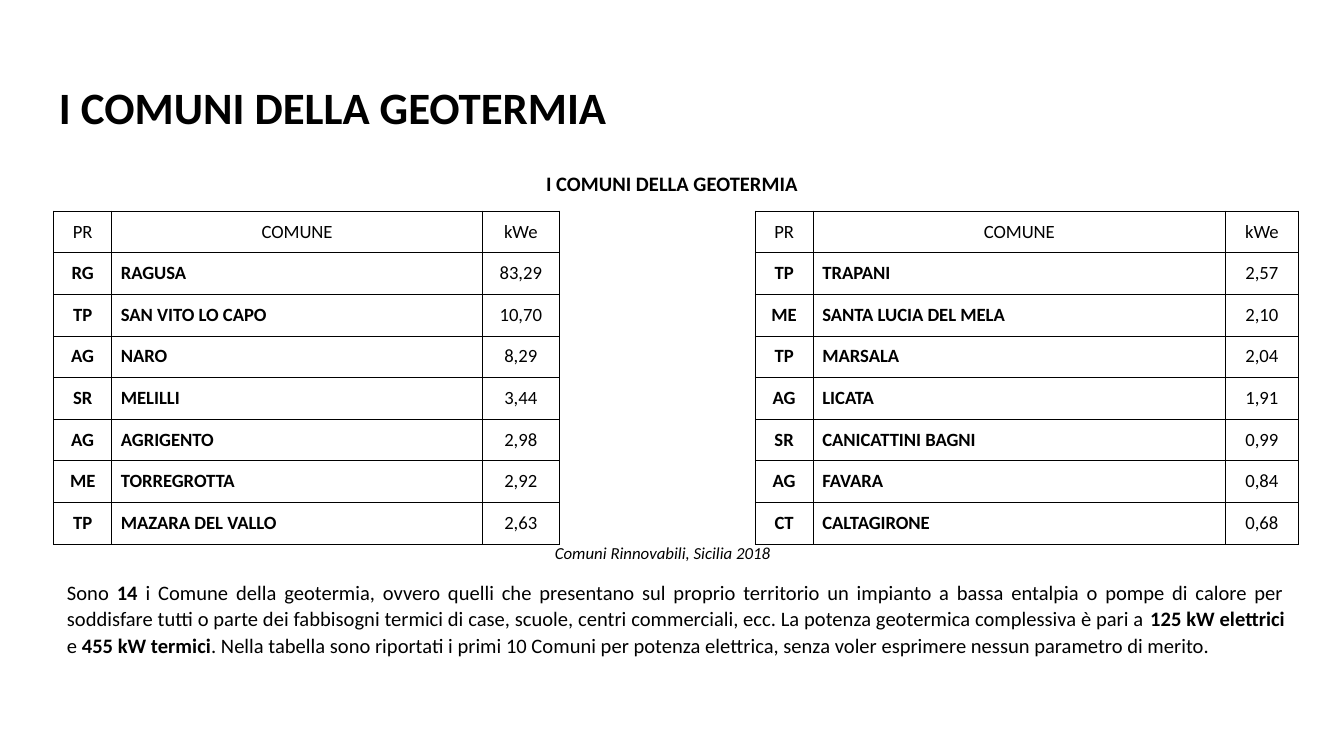
from lxml import etree
from pptx import Presentation
from pptx.dml.color import RGBColor
from pptx.enum.text import MSO_ANCHOR, PP_ALIGN
from pptx.oxml.ns import qn
from pptx.util import Inches, Pt

LEFT, CENTER, JUSTIFY = PP_ALIGN.LEFT, PP_ALIGN.CENTER, PP_ALIGN.JUSTIFY
TOP, MIDDLE = MSO_ANCHOR.TOP, MSO_ANCHOR.MIDDLE
FONT, BLACK = "Calibri", "000000"

# Content
TITLE = "I COMUNI DELLA GEOTERMIA"
SOURCE = "Comuni Rinnovabili, Sicilia 2018"
HEADER = ("PR", "COMUNE", "kWe")
LEFT_TOWNS = [
    ("RG", "RAGUSA", "83,29"),
    ("TP", "SAN VITO LO CAPO", "10,70"),
    ("AG", "NARO", "8,29"),
    ("SR", "MELILLI", "3,44"),
    ("AG", "AGRIGENTO", "2,98"),
    ("ME", "TORREGROTTA", "2,92"),
    ("TP", "MAZARA DEL VALLO", "2,63"),
]
RIGHT_TOWNS = [
    ("TP", "TRAPANI", "2,57"),
    ("ME", "SANTA LUCIA DEL MELA", "2,10"),
    ("TP", "MARSALA", "2,04"),
    ("AG", "LICATA", "1,91"),
    ("SR", "CANICATTINI BAGNI", "0,99"),
    ("AG", "FAVARA", "0,84"),
    ("CT", "CALTAGIRONE", "0,68"),
]
# Comment spans: text, bold
COMMENT = [
    ("Sono ", False),
    ("14", True),
    (" i Comune della geotermia, ovvero quelli che presentano sul proprio territorio "
     "un impianto a bassa entalpia o pompe di calore per soddisfare tutti o parte dei "
     "fabbisogni termici di case, scuole, centri commerciali, ecc. La potenza "
     "geotermica complessiva è pari a ", False),
    ("125 kW elettrici", True),
    (" e ", False),
    ("455 kW termici", True),
    (". Nella tabella sono riportati i primi 10 Comuni per potenza elettrica, senza "
     "voler esprimere nessun parametro di merito.", False),
]

# Layout, in inches, on a 16:9 slide
SLIDE_WIDTH = 10
SLIDE_HEIGHT = SLIDE_WIDTH * 9 / 16
HEADING_LEFT = 0.34
HEADING_WIDTH = SLIDE_WIDTH - 2 * HEADING_LEFT
TABLE_LEFT, TABLE_TOP = 0.4, 1.57
COLUMNS = [0.43, 2.76, 0.57, 1.46, 0.43, 3.07, 0.54]
GAP_COLUMN = 3
ROW_HEIGHT = 0.31


def color(value):
    return RGBColor.from_string(value)


def add_spans(para, spans, size, italic=False):
    for text, bold in spans:
        span = para.add_run()
        span.text = text
        font = span.font
        font.name, font.size, font.bold, font.italic = FONT, Pt(size), bold, italic
        font.color.rgb = color(BLACK)


def add_text(slide, place, spans, size, align=LEFT, anchor=MIDDLE,
             spacing=1.08, after=0, italic=False):
    box = slide.shapes.add_textbox(*[Inches(length) for length in place])
    frame = box.text_frame
    frame.word_wrap = True
    frame.vertical_anchor = anchor
    frame.margin_left = frame.margin_right = Inches(0.1)
    frame.margin_top = frame.margin_bottom = Inches(0.1)
    para = frame.paragraphs[0]
    para.alignment, para.line_spacing, para.space_after = align, spacing, Pt(after)
    add_spans(para, spans, size, italic)


def set_borders(cell, visible_sides):
    properties = cell._tc.get_or_add_tcPr()
    for side in "LRTB":
        line = etree.SubElement(properties, qn(f"a:ln{side}"), w=str(Pt(0.5)))
        if side in visible_sides:
            fill = etree.SubElement(line, qn("a:solidFill"))
            etree.SubElement(fill, qn("a:srgbClr"), val=BLACK)
        else:
            etree.SubElement(line, qn("a:noFill"))


def add_towns_table(slide):
    rows = [HEADER + ("",) + HEADER]
    rows += [left + ("",) + right for left, right in zip(LEFT_TOWNS, RIGHT_TOWNS)]
    table = slide.shapes.add_table(
        len(rows), len(COLUMNS), Inches(TABLE_LEFT), Inches(TABLE_TOP),
        Inches(sum(COLUMNS)), Inches(ROW_HEIGHT * len(rows))).table
    table.first_row = table.horz_banding = False
    for column, width in zip(table.columns, COLUMNS):
        column.width = Inches(width)

    for row_index, values in enumerate(rows):
        table.rows[row_index].height = Inches(ROW_HEIGHT)
        for column_index, text in enumerate(values):
            cell = table.cell(row_index, column_index)
            is_gap = column_index == GAP_COLUMN
            margin = Inches(0 if is_gap else 0.07)
            cell.margin_left = cell.margin_right = margin
            cell.margin_top = cell.margin_bottom = margin
            set_borders(cell, "LR" if is_gap else "LRTB")
            cell.fill.background()
            if is_gap:
                continue
            is_town = row_index > 0
            heading = HEADER[column_index % (GAP_COLUMN + 1)]
            para = cell.text_frame.paragraphs[0]
            para.alignment = LEFT if is_town and heading == "COMUNE" else CENTER
            add_spans(para, [(text, is_town and heading != "kWe")], 10)


def main():
    deck = Presentation()
    deck.slide_width, deck.slide_height = Inches(SLIDE_WIDTH), Inches(SLIDE_HEIGHT)
    slide = deck.slides.add_slide(deck.slide_layouts[6])

    # Slide title
    add_text(slide, (HEADING_LEFT, 0.49, HEADING_WIDTH, 0.63), [(TITLE, True)], 24,
             anchor=TOP, spacing=1.0)
    # Table with its heading and source
    add_towns_table(slide)
    add_text(slide, (HEADING_LEFT, 1.23, HEADING_WIDTH, 0.26), [(TITLE, True)], 11,
             align=CENTER)
    add_text(slide, (4.03, 3.94, 1.92, 0.33), [(SOURCE, False)], 9, italic=True)
    # Comment
    add_text(slide, (TABLE_LEFT, 4.09, sum(COLUMNS), 1.01), COMMENT, 11,
             align=JUSTIFY, after=8)

    deck.save("out.pptx")


if __name__ == "__main__":
    main()
